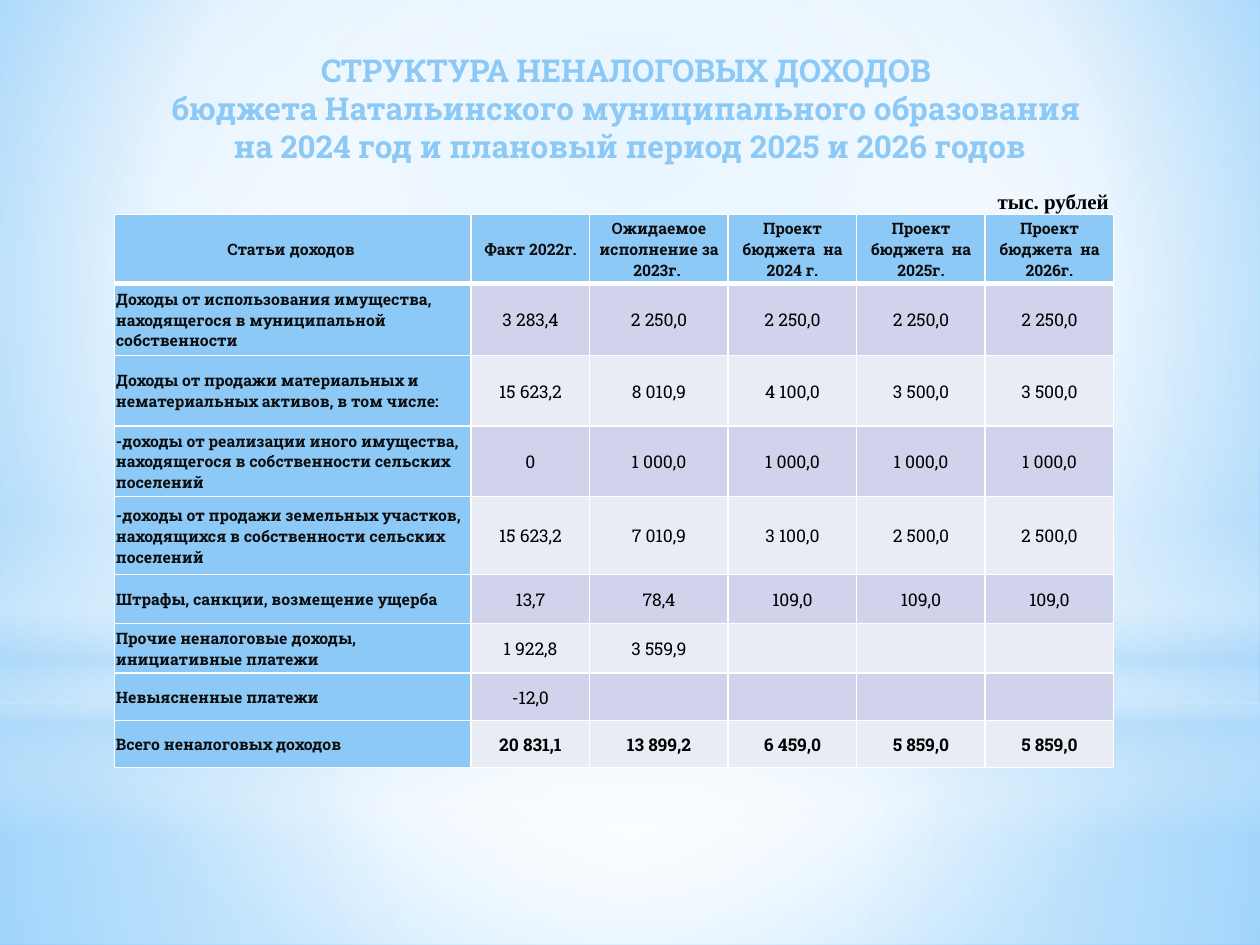
"""Build a slide with the table of non-tax revenue of a municipal budget."""
from dataclasses import dataclass
from typing import NamedTuple

from pptx import Presentation
from pptx.dml.color import RGBColor as Rgb
from pptx.enum.shapes import MSO_SHAPE as Preset
from pptx.enum.text import MSO_ANCHOR as Anchor, PP_ALIGN as Align
from pptx.oxml import parse_xml
from pptx.oxml.ns import nsdecls
from pptx.util import Emu, Inches, Pt

WIDTH, HEIGHT = Inches(10), Inches(7.5)


@dataclass(frozen=True)
class Theme:
    face: str = "Roboto Slab"
    unit_face: str = "Times New Roman"
    blue: str = "8CC9F7"
    pale: str = "B4DCFA"
    white: str = "FFFFFF"
    center: str = "9ED5FF"
    rim: str = "5BB9FF"
    outline: str = "073C65"
    label: str = "0D0D0D"
    black: str = "000000"
    bands: tuple = ("D0D3EB", "E9EBF5")
    title_size: float = 18
    unit_size: float = 12
    label_size: float = 9
    value_size: float = 10


THEME = Theme()


class Area(NamedTuple):
    """Left, top, width and height in percent of the slide."""
    left: float
    top: float
    width: float
    height: float


class Stop(NamedTuple):
    place: int
    color: str
    opacity: int = 100


class Glow(NamedTuple):
    preset: Preset
    area: Area
    stops: tuple
    angle: int | None = None


class Income(NamedTuple):
    label: str
    values: tuple
    bold: bool = False


WHITE, PALE = THEME.white, THEME.pale
BACKDROP = (Stop(0, THEME.center), Stop(60, WHITE), Stop(100, THEME.rim))
GLOWS = (
    Glow(Preset.RECTANGLE, Area(0, 74.4, 100, 25.6),
         (Stop(0, WHITE, 91), Stop(37, WHITE, 76), Stop(100, PALE, 79))),
    Glow(Preset.RECTANGLE, Area(0, 0, 100, 74.4),
         (Stop(0, WHITE, 89), Stop(48, WHITE, 62), Stop(100, PALE, 79))),
    Glow(Preset.RECTANGLE, Area(0, 54.93, 100, 33.33),
         (Stop(0, WHITE, 0), Stop(29, WHITE, 30), Stop(45, PALE, 40),
          Stop(55, WHITE, 26), Stop(65, PALE, 60), Stop(100, WHITE, 0)), 90),
    Glow(Preset.OVAL, Area(0, 23.33, 100, 74.4),
         (Stop(0, WHITE), Stop(56, WHITE, 0))),
)
TITLE = ("СТРУКТУРА НЕНАЛОГОВЫХ ДОХОДОВ \v"
         "бюджета Натальинского муниципального образования \v"
         "на 2024 год и плановый период 2025 и 2026 годов")
HEADINGS = ("Статьи доходов ", "Факт 2022г.", "Ожидаемое исполнение за 2023г. ",
            "Проект бюджета  на 2024 г.", "Проект бюджета  на 2025г.",
            "Проект бюджета  на 2026г.")
INCOMES = (
    Income("Доходы от использования имущества, находящегося в муниципальной собственности",
           ("3 283,4",) + ("2 250,0",) * 4),
    Income("Доходы от продажи материальных и нематериальных активов, в том числе:",
           ("15 623,2", "8 010,9", "4 100,0", "3 500,0", "3 500,0")),
    Income("-доходы от реализации иного имущества, находящегося в собственности сельских поселений",
           ("0",) + ("1 000,0",) * 4),
    Income("-доходы от продажи земельных участков, находящихся в собственности сельских поселений",
           ("15 623,2", "7 010,9", "3 100,0", "2 500,0", "2 500,0")),
    Income("Штрафы, санкции, возмещение ущерба", ("13,7", "78,4") + ("109,0",) * 3),
    Income("Прочие неналоговые доходы, инициативные платежи",
           ("1 922,8", "3 559,9", "", "", "")),
    Income("Невыясненные платежи", ("-12,0", "", "", "", "")),
    Income("Всего неналоговых доходов",
           ("20 831,1", "13 899,2", "6 459,0", "5 859,0", "5 859,0"), True),
)
COLUMNS = (28.3, 9.4, 11, 10.2, 10.2, 10.2)
ROWS = (7.33, 7.6, 7.47, 7.47, 8.27, 5.2, 5.2, 5.07, 4.93)
TABLE_AREA = Area(9.1, 22.67, sum(COLUMNS), sum(ROWS))


def across(percent: float) -> Emu:
    return Emu(round(WIDTH * percent / 100))


def down(percent: float) -> Emu:
    return Emu(round(HEIGHT * percent / 100))


def frame(area: Area) -> tuple:
    return across(area.left), down(area.top), across(area.width), down(area.height)


def paint_gradient(fill, holder, stops: tuple, focus: tuple = (50, 50, 50, 50),
                   angle: int | None = None) -> None:
    fill.solid()
    marks = "".join(
        f'<a:gs pos="{stop.place * 1000}"><a:srgbClr val="{stop.color}">'
        f'<a:alpha val="{stop.opacity * 1000}"/></a:srgbClr></a:gs>' for stop in stops)
    if angle is None:
        sides = " ".join(f'{side}="{share * 1000}"' for side, share in zip("ltrb", focus))
        course = f'<a:path path="circle"><a:fillToRect {sides}/></a:path>'
    else:
        course = f'<a:lin ang="{angle * 60000}" scaled="0"/>'
    gradient = parse_xml(f'<a:gradFill {nsdecls("a")} rotWithShape="1">'
                         f'<a:gsLst>{marks}</a:gsLst>{course}</a:gradFill>')
    holder.replace(holder.xpath("./a:solidFill")[0], gradient)


def draw_glow(page, glow: Glow) -> None:
    shape = page.shapes.add_shape(glow.preset, *frame(glow.area))
    shape.shadow.inherit = False
    shape.line.fill.background()
    paint_gradient(shape.fill, shape.element.spPr, glow.stops, angle=glow.angle)


def border(tag: str, points: float, color: str):
    return parse_xml(f'<a:{tag} {nsdecls("a")} w="{Pt(points)}"><a:solidFill>'
                     f'<a:srgbClr val="{color}"/></a:solidFill></a:{tag}>')


def write(text_frame, text: str, *, size: float, color: str, face: str = THEME.face,
          bold: bool = True, align: Align = Align.CENTER, outline: str = "") -> None:
    para = text_frame.paragraphs[0]
    para.text, para.alignment = text, align
    for span in para.runs:
        font = span.font
        font.name, font.size, font.bold = face, Pt(size), bold
        font.color.rgb = Rgb.from_string(color)
        if outline:
            font._element.insert(0, border("ln", 1, outline))


def add_text(page, area: Area, text: str, **style) -> None:
    box = page.shapes.add_textbox(*frame(area))
    box.text_frame.word_wrap = True
    write(box.text_frame, text, **style)


def fill_cell(cell, text: str, fill: str, top: float = 1, bottom: float = 1,
              side: float = 0.01, **style) -> None:
    cell.fill.solid()
    cell.fill.fore_color.rgb = Rgb.from_string(fill)
    cell.vertical_anchor = Anchor.MIDDLE
    cell.margin_left = cell.margin_right = Inches(side)
    cell.margin_top, cell.margin_bottom = Inches(0.01), 0
    properties = cell._tc.get_or_add_tcPr()
    for place, (edge, points) in enumerate(zip("LRTB", (1, 1, top, bottom))):
        properties.insert(place, border(f"ln{edge}", points, THEME.white))
    write(cell.text_frame, text, **style)


def add_income_table(page) -> None:
    table = page.shapes.add_table(len(ROWS), len(COLUMNS), *frame(TABLE_AREA)).table
    table.first_row = table.horz_banding = False
    for column, share in zip(table.columns, COLUMNS):
        column.width = across(share)
    for row, share in zip(table.rows, ROWS):
        row.height = down(share)
    label_style = dict(fill=THEME.blue, size=THEME.label_size, color=THEME.label)
    for column, heading in enumerate(HEADINGS):
        fill_cell(table.cell(0, column), heading, bottom=3,
                  side=0.01 if column else 0.06, **label_style)
    for row, income in enumerate(INCOMES, 1):
        top = 3 if row == 1 else 1
        fill_cell(table.cell(row, 0), income.label, top=top, align=Align.LEFT, **label_style)
        for column, value in enumerate(income.values, 1):
            fill_cell(table.cell(row, column), value, THEME.bands[(row - 1) % 2], top=top,
                      size=THEME.value_size, color=THEME.black, bold=income.bold)


def main() -> None:
    deck = Presentation()
    deck.slide_width, deck.slide_height = WIDTH, HEIGHT
    page = deck.slides.add_slide(deck.slide_layouts[6])
    backdrop = page.background.fill
    backdrop.solid()
    paint_gradient(backdrop, page.element.xpath(".//p:bgPr")[0], BACKDROP, (20, 10, 20, 60))
    for glow in GLOWS:
        draw_glow(page, glow)
    add_text(page, Area(5, 4.8, 90, 15.2), TITLE, size=THEME.title_size,
             color=THEME.blue, outline=THEME.outline)
    add_income_table(page)
    add_text(page, Area(78.2, 19.33, 12.6, 4), "тыс. рублей", size=THEME.unit_size,
             color=THEME.black, face=THEME.unit_face, align=Align.LEFT)
    deck.save("out.pptx")


if __name__ == "__main__":
    main()
